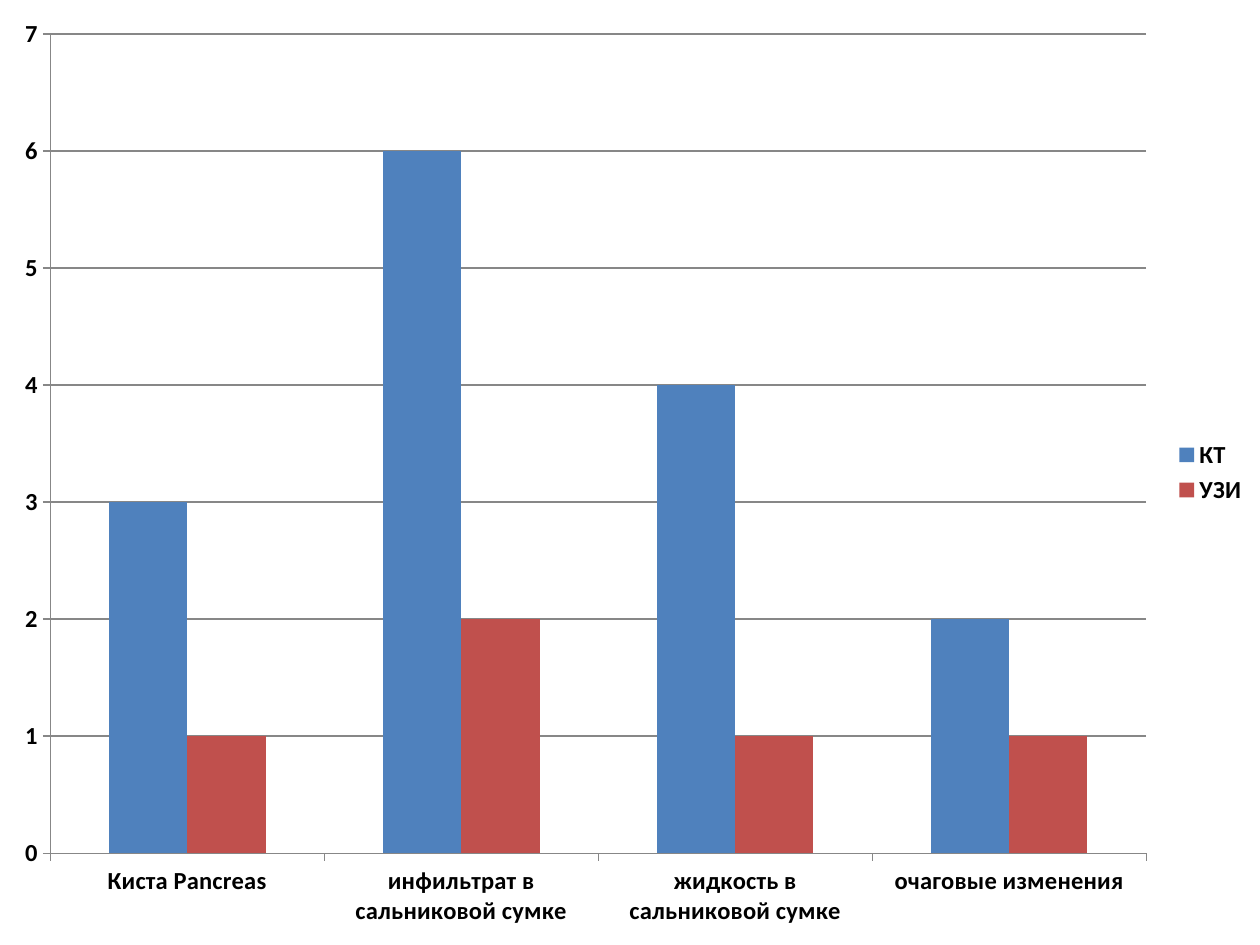
"""Build a slide with a clustered column chart of CT and ultrasound findings."""
from pptx import Presentation
from pptx.chart.data import CategoryChartData
from pptx.dml.color import RGBColor
from pptx.enum.chart import XL_CHART_TYPE, XL_LEGEND_POSITION, XL_TICK_MARK
from pptx.util import Inches, Pt

COLUMNS = XL_CHART_TYPE.COLUMN_CLUSTERED
RIGHT = XL_LEGEND_POSITION.RIGHT
OUTSIDE = XL_TICK_MARK.OUTSIDE
COLORS = {"text": "000000", "line": "878787", "КТ": "4F81BD", "УЗИ": "C0504D"}
CATEGORIES = ["Киста Pancreas", "инфильтрат в сальниковой сумке",
              "жидкость в сальниковой сумке", "очаговые изменения"]
FINDINGS = {"КТ": [3, 6, 4, 2], "УЗИ": [1, 2, 1, 1]}


class Deck:
    def __init__(self, slide, font="Calibri", size=14):
        self.s, self.font, self.size = slide, font, size

    def color(self, name):
        return RGBColor.from_string(COLORS[name])

    def style_font(self, font):
        font.name, font.size, font.bold = self.font, Pt(self.size), True
        font.color.rgb = self.color("text")

    def style_line(self, line, width):
        line.color.rgb = self.color("line")
        line.width = Pt(width)

    def style_axis(self, axis):
        axis.major_tick_mark = OUTSIDE
        self.style_font(axis.tick_labels.font)
        self.style_line(axis.format.line, 0.75)

    def column_chart(self, categories, series, x, y, w, h, top):
        data = CategoryChartData(number_format="General")
        data.categories = categories
        for name, values in series.items():
            data.add_series(name, values)
        chart = self.s.shapes.add_chart(
            COLUMNS, Inches(x), Inches(y), Inches(w), Inches(h), data).chart
        chart.has_title = False
        self.style_font(chart.font)
        chart.has_legend = True
        chart.legend.position = RIGHT
        chart.legend.include_in_layout = False
        self.style_font(chart.legend.font)
        self.style_axis(chart.category_axis)
        axis = chart.value_axis
        self.style_axis(axis)
        axis.minimum_scale, axis.maximum_scale, axis.major_unit = 0, top, 1
        axis.has_major_gridlines = True
        self.style_line(axis.major_gridlines.format.line, 0.75)
        plot = chart.plots[0]
        plot.gap_width, plot.overlap, plot.vary_by_categories = 150, 0, False
        for ser in plot.series:
            ser.format.fill.solid()
            ser.format.fill.fore_color.rgb = self.color(ser.name)


def main():
    prs = Presentation()
    prs.slide_width, prs.slide_height = Inches(10), Inches(7.5)
    deck = Deck(prs.slides.add_slide(prs.slide_layouts[6]))
    deck.column_chart(CATEGORIES, FINDINGS, 0, 0, 10, 7.5, top=7)
    prs.save("out.pptx")


if __name__ == "__main__":
    main()
